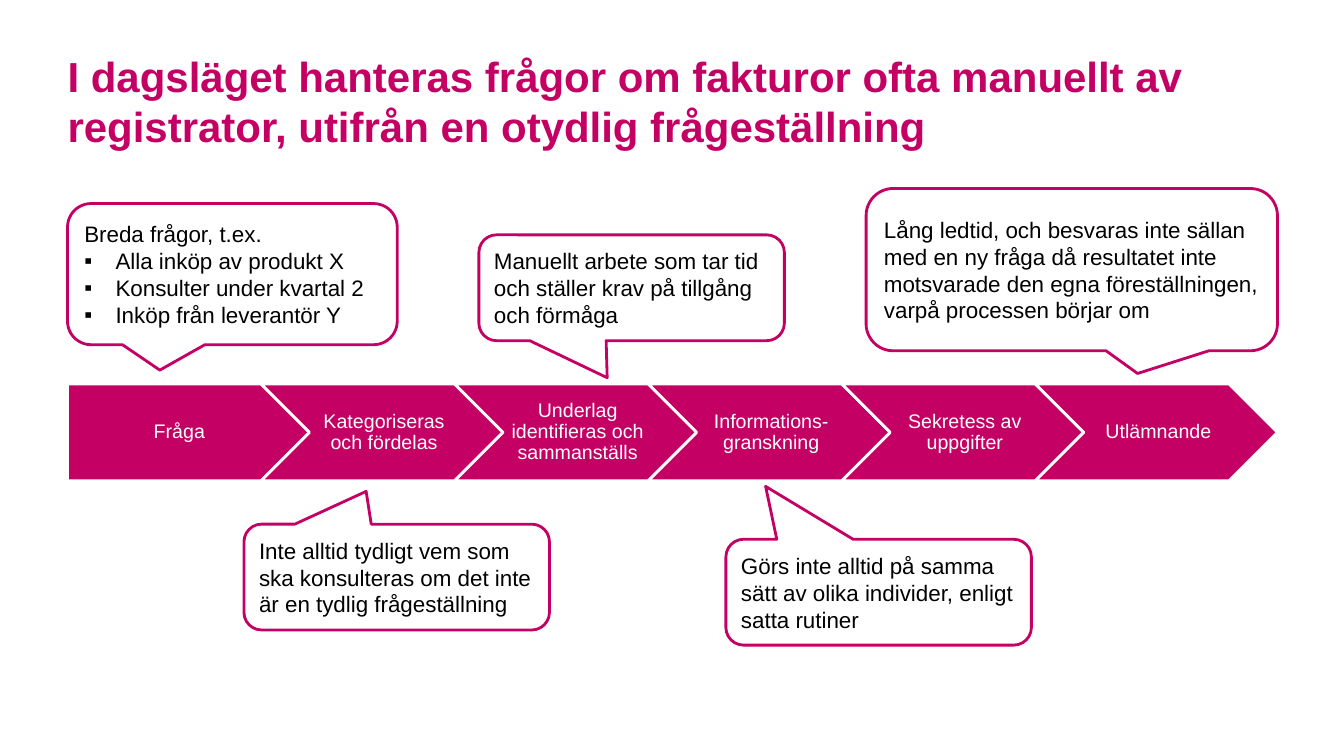
from pptx import Presentation
from pptx.dml.color import RGBColor
from pptx.enum.shapes import MSO_SHAPE
from pptx.enum.text import MSO_ANCHOR, PP_ALIGN
from pptx.util import Inches, Pt
from lxml import etree

MAGENTA = RGBColor(0xC4, 0x00, 0x64)
WHITE = RGBColor(0xFF, 0xFF, 0xFF)
BLACK = RGBColor(0x00, 0x00, 0x00)
PENTAGON, CHEVRON = MSO_SHAPE.PENTAGON, MSO_SHAPE.CHEVRON
CALLOUT = MSO_SHAPE.ROUNDED_RECTANGULAR_CALLOUT
TOP, MIDDLE = MSO_ANCHOR.TOP, MSO_ANCHOR.MIDDLE
LEFT, CENTER = PP_ALIGN.LEFT, PP_ALIGN.CENTER
DRAWING = "{http://schemas.openxmlformats.org/drawingml/2006/main}"

TITLE = ("I dagsläget hanteras frågor om fakturor ofta manuellt av registrator, "
         "utifrån en otydlig frågeställning")
STEPS = ["Fråga", "Kategoriseras och fördelas", "Underlag identifieras och sammanställs",
         "Informations-granskning", "Sekretess av uppgifter", "Utlämnande"]
STEP_LEFT, STEP_TOP, STEP_WIDTH, STEP_HEIGHT, STEP_PITCH = 0.67, 3.81, 2.4, 0.96, 1.92
REMARKS = [
    ((8.59, 1.87, 4.08, 1.61), (0.16, 0.64),
     ["Lång ledtid, och besvaras inte sällan med en ny fråga då resultatet inte "
      "motsvarade den egna föreställningen, varpå processen börjar om"]),
    ((4.75, 2.33, 3.03, 1.05), (-0.08, 0.85),
     ["Manuellt arbete som tar tid och ställer krav på tillgång och förmåga"]),
    ((0.67, 2.02, 3.27, 1.4), (-0.22, 0.68),
     ["Breda frågor, t.ex.", "Alla inköp av produkt X", "Konsulter under kvartal 2",
      "Inköp från leverantör Y"]),
    ((7.2, 5.35, 3.03, 1.05), (-0.37, -1),
     ["Görs inte alltid på samma sätt av olika individer, enligt satta rutiner"]),
    ((2.42, 5.2, 3.03, 1.05), (-0.1, -0.81),
     ["Inte alltid tydligt vem som ska konsulteras om det inte är en tydlig frågeställning"]),
]


def add_bullet(paragraph):
    properties = paragraph._p.get_or_add_pPr()
    properties.set("marL", str(Inches(0.31)))
    properties.set("indent", str(-Inches(0.31)))
    etree.SubElement(properties, DRAWING + "buFont", typeface="Arial")
    etree.SubElement(properties, DRAWING + "buChar", char="▪")


def write(frame, lines, size, color, bold=False, align=LEFT, anchor=MIDDLE,
          spacing=1.0, insets=(0.1, 0.05, 0.1, 0.05)):
    frame.word_wrap = True
    frame.vertical_anchor = anchor
    (frame.margin_left, frame.margin_top,
     frame.margin_right, frame.margin_bottom) = map(Inches, insets)
    for index, line in enumerate(lines):
        paragraph = frame.add_paragraph() if index else frame.paragraphs[0]
        paragraph.alignment = align
        paragraph.line_spacing = spacing
        if index:
            add_bullet(paragraph)
        run = paragraph.add_run()
        run.text = line
        run.font.name = "Arial"
        run.font.size = Pt(size)
        run.font.bold = bold
        run.font.color.rgb = color


class ProcessSlide:
    """Draws the title, process steps and remarks in one shared style."""

    def __init__(self, slide):
        self.slide = slide

    def title(self, text):
        heading = self.slide.shapes.title
        heading.left, heading.top = Inches(0.67), Inches(0.5)
        heading.width, heading.height = Inches(12), Inches(0.91)
        write(heading.text_frame, [text], 30, MAGENTA, bold=True, anchor=TOP,
              insets=(0, 0, 0, 0))

    def shape(self, kind, box, line):
        shape = self.slide.shapes.add_shape(kind, *map(Inches, box))
        shape.shadow.inherit = False
        shape.line.color.rgb = line
        shape.line.width = Pt(2)
        return shape

    def step(self, index, text):
        box = (STEP_LEFT + index * STEP_PITCH, STEP_TOP, STEP_WIDTH, STEP_HEIGHT)
        arrow = self.shape(CHEVRON if index else PENTAGON, box, WHITE)
        arrow.fill.solid()
        arrow.fill.fore_color.rgb = MAGENTA
        write(arrow.text_frame, [text], 14, WHITE, align=CENTER, spacing=0.9,
              insets=(0.06 if index else 0.08, 0.04, 0.02, 0.04))

    def remark(self, box, tip, lines):
        bubble = self.shape(CALLOUT, box, MAGENTA)
        bubble.fill.background()
        bubble.adjustments[0], bubble.adjustments[1] = tip
        write(bubble.text_frame, lines, 16, BLACK)


def main():
    deck = Presentation()
    deck.slide_width, deck.slide_height = Inches(13.33), Inches(7.5)
    page = ProcessSlide(deck.slides.add_slide(deck.slide_layouts[5]))
    page.title(TITLE)
    for index, step in enumerate(STEPS):
        page.step(index, step)
    for box, tip, lines in REMARKS:
        page.remark(box, tip, lines)
    deck.save("out.pptx")


if __name__ == "__main__":
    main()
